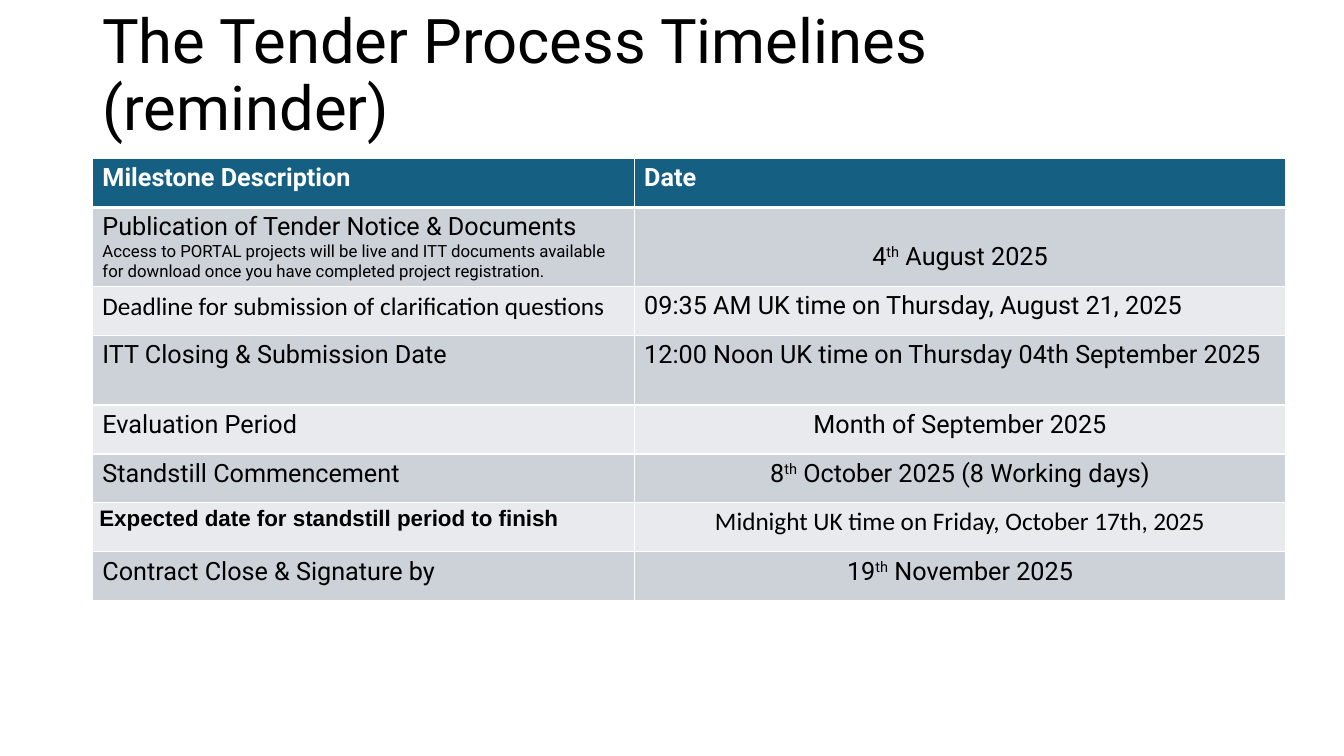
from dataclasses import dataclass

from lxml import etree
from pptx import Presentation
from pptx.dml.color import RGBColor
from pptx.enum import text
from pptx.oxml import ns
from pptx.util import Pt

BLACK = RGBColor(0x00, 0x00, 0x00)
WHITE = RGBColor(0xFF, 0xFF, 0xFF)
HEADER = RGBColor(0x15, 0x60, 0x82)
BANDS = (RGBColor(0xCC, 0xD2, 0xD8), RGBColor(0xE8, 0xEA, 0xED))

LEFT = Pt(66)
COLUMN_WIDTHS = (387, 465.6)
CENTER = text.PP_ALIGN.CENTER


@dataclass
class Entry:
    """Cell text; a part between carets is superscript."""
    words: str
    note: str = ""
    font: str = "Roboto"
    size: float = 18
    bold: bool = False
    align: text.PP_ALIGN = text.PP_ALIGN.LEFT
    side_margin: float = 7.2
    top_margin: float = 3.6
    bottom_margin: float = 2.4


@dataclass
class Milestone:
    description: Entry
    date: Entry
    height: float = 35


MILESTONES = [
    Milestone(Entry("Milestone Description", bold=True), Entry("Date", bold=True)),
    Milestone(
        Entry("Publication of Tender Notice & Documents",
              note="Access to PORTAL projects will be live and ITT documents available "
                   "for download once you have completed project registration."),
        Entry("4^th^ August 2025", align=CENTER, top_margin=24.7),
        height=55.6),
    Milestone(Entry("Deadline for submission of clarification questions", font="Calibri"),
              Entry("09:35 AM UK time on Thursday, August 21, 2025")),
    Milestone(Entry("ITT Closing & Submission Date"),
              Entry("12:00 Noon UK time on Thursday 04th September 2025"),
              height=49.6),
    Milestone(Entry("Evaluation Period"),
              Entry("Month of September 2025", align=CENTER)),
    Milestone(Entry("Standstill Commencement"),
              Entry("8^th^ October 2025 (8 Working days)", align=CENTER)),
    Milestone(Entry("Expected date for standstill period to finish", font="Arial",
                    size=16, bold=True, side_margin=5, top_margin=2.6),
              Entry("Midnight UK time on Friday, October 17th, 2025", font="Calibri",
                    align=CENTER, side_margin=5, top_margin=2.6)),
    Milestone(Entry("Contract Close & Signature by"),
              Entry("19^th^ November 2025", align=CENTER)),
]


def format_run(r, font: str, size: float, color: RGBColor, bold: bool = False) -> None:
    r.font.name = font
    r.font.size = Pt(size)
    r.font.bold = bold
    r.font.color.rgb = color


def add_title(slide, words: str) -> None:
    sp = slide.shapes.add_textbox(LEFT, Pt(3), Pt(828), Pt(104))
    tf = sp.text_frame
    tf.word_wrap = True
    tf.vertical_anchor = text.MSO_ANCHOR.MIDDLE
    p = tf.paragraphs[0]
    p.text = words
    p.line_spacing = 0.9
    for r in p.runs:
        format_run(r, "Roboto", 44, BLACK)


def set_borders(cell, top: float, bottom: float) -> None:
    tc_pr = cell._tc.get_or_add_tcPr()
    for side, width in (("L", 1), ("R", 1), ("T", top), ("B", bottom)):
        ln = etree.SubElement(tc_pr, ns.qn(f"a:ln{side}"), w=str(Pt(width)))
        fill = etree.SubElement(ln, ns.qn("a:solidFill"))
        etree.SubElement(fill, ns.qn("a:srgbClr"), val=str(WHITE))


def fill_cell(cell, entry: Entry, color: RGBColor) -> None:
    cell.margin_left = cell.margin_right = Pt(entry.side_margin)
    cell.margin_top = Pt(entry.top_margin)
    cell.margin_bottom = Pt(entry.bottom_margin)
    p = cell.text_frame.paragraphs[0]
    p.alignment = entry.align
    for i, part in enumerate(entry.words.split("^")):
        r = p.add_run()
        r.text = part
        format_run(r, entry.font, entry.size, color, entry.bold)
        if i % 2:
            r._r.get_or_add_rPr().set("baseline", "30000")
    if entry.note:
        p = cell.text_frame.add_paragraph()
        p.text = entry.note
        format_run(p.runs[0], entry.font, 12, color)


def add_timeline(slide, milestones: list[Milestone]) -> None:
    height = sum(m.height for m in milestones)
    frame = slide.shapes.add_table(len(milestones), len(COLUMN_WIDTHS), LEFT, Pt(113.3),
                                   Pt(sum(COLUMN_WIDTHS)), Pt(height))
    table = frame.table
    for column, width in zip(table.columns, COLUMN_WIDTHS):
        column.width = Pt(width)
    for i, milestone in enumerate(milestones):
        table.rows[i].height = Pt(milestone.height)
        for j, entry in enumerate((milestone.description, milestone.date)):
            cell = table.cell(i, j)
            fill_cell(cell, entry, BLACK if i else WHITE)
            set_borders(cell, top=3 if i == 1 else 1, bottom=1 if i else 3)
            cell.fill.solid()
            cell.fill.fore_color.rgb = BANDS[(i - 1) % 2] if i else HEADER


def main() -> None:
    prs = Presentation()
    prs.slide_width, prs.slide_height = Pt(960), Pt(540)
    slide = prs.slides.add_slide(prs.slide_layouts[6])
    add_title(slide, "The Tender Process Timelines\v(reminder)")
    add_timeline(slide, MILESTONES)
    prs.save("out.pptx")


if __name__ == "__main__":
    main()
